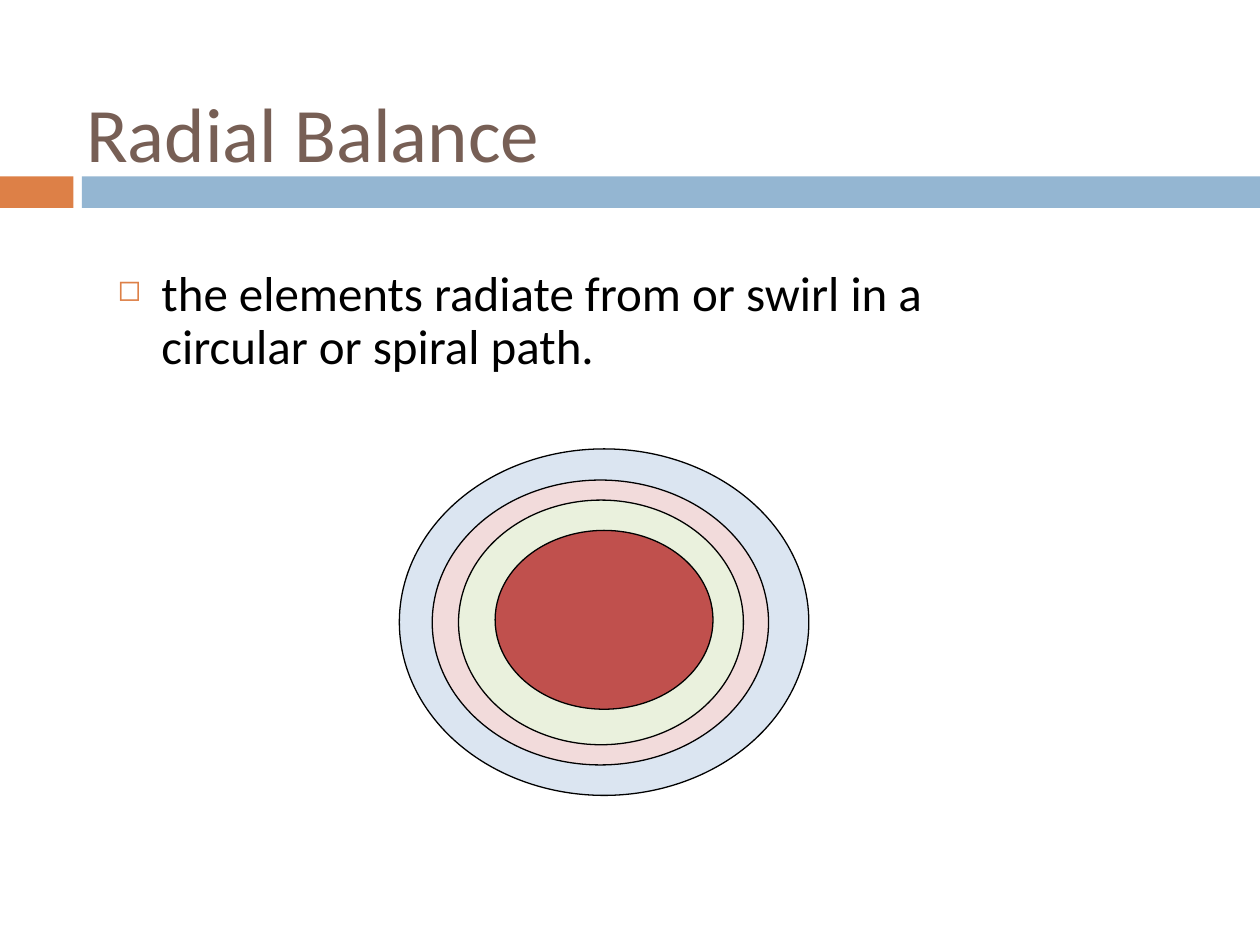
"""Build the Radial Balance slide with its ring diagram."""
from lxml.etree import SubElement
from pptx import Presentation
from pptx.dml.color import RGBColor
from pptx.enum.shapes import MSO_SHAPE as Kind
from pptx.enum.text import MSO_ANCHOR as Anchor, PP_ALIGN as Align
from pptx.oxml.ns import qn
from pptx.util import Pt

BLACK = RGBColor(0, 0, 0)
BROWN = RGBColor(0x77, 0x5F, 0x55)
ORANGE = RGBColor(0xDD, 0x80, 0x47)
BLUE = RGBColor(0x94, 0xB6, 0xD2)
SKY = RGBColor(0xDB, 0xE5, 0xF1)
PINK = RGBColor(0xF2, 0xDB, 0xDB)
LIME = RGBColor(0xEA, 0xF1, 0xDD)
RED = RGBColor(0xC0, 0x50, 0x4D)

TITLE = "Radial Balance"
BODY = "the elements radiate from or swirl in a circular or spiral path."
BARS = [(0, 42, ORANGE), (46.8, 673.2, BLUE)]
RINGS = [
    (345.2, 355.5, 234, 198, SKY),
    (343.1, 355.7, 192.2, 162.8, PINK),
    (343.4, 355.7, 162.8, 139.8, LIME),
    (345.2, 354.2, 124.5, 102.2, RED),
]


def write(shape, text, size, color, anchor, before=0, spacing=1.0):
    frame = shape.text_frame
    frame.word_wrap = True
    frame.vertical_anchor = anchor
    para = frame.paragraphs[0]
    para.alignment = Align.LEFT
    para.space_before = Pt(before)
    para.line_spacing = spacing
    run = para.add_run()
    run.text = text
    run.font.name = "Calibri"
    run.font.size = Pt(size)
    run.font.color.rgb = color
    return para


def bullet(para, mark, color, scale, indent):
    props = para._p.get_or_add_pPr()
    props.set("marL", str(Pt(indent)))
    props.set("indent", str(-Pt(indent)))
    tint = SubElement(props, qn("a:buClr"))
    SubElement(tint, qn("a:srgbClr"), val=str(color))
    SubElement(props, qn("a:buSzPct"), val=str(scale * 1000))
    SubElement(props, qn("a:buChar"), char=mark)


def draw(slide, kind, box, color, edge=None):
    shape = slide.shapes.add_shape(kind, *map(Pt, box))
    shape.shadow.inherit = False
    shape.fill.solid()
    shape.fill.fore_color.rgb = color
    if edge is None:
        shape.line.fill.background()
    else:
        shape.line.color.rgb = edge
        shape.line.width = Pt(0.75)


def main():
    deck = Presentation()
    deck.slide_width, deck.slide_height = Pt(720), Pt(540)
    slide = deck.slides.add_slide(deck.slide_layouts[5])

    for left, width, color in BARS:
        draw(slide, Kind.RECTANGLE, (left, 100.8, width, 18), color)

    title = slide.shapes.title
    title.left, title.top, title.width, title.height = map(Pt, (42, 30, 606, 90))
    write(title, TITLE, 44, BROWN, Anchor.MIDDLE)

    body = slide.shapes.add_textbox(*map(Pt, (60, 150, 546, 342)))
    para = write(body, BODY, 28, BLACK, Anchor.TOP, before=7, spacing=0.9)
    bullet(para, "◻", ORANGE, 60, 25.2)

    for x, y, width, height, color in RINGS:
        box = (x - width / 2, y - height / 2, width, height)
        draw(slide, Kind.OVAL, box, color, BLACK)

    deck.save("out.pptx")


if __name__ == "__main__":
    main()
